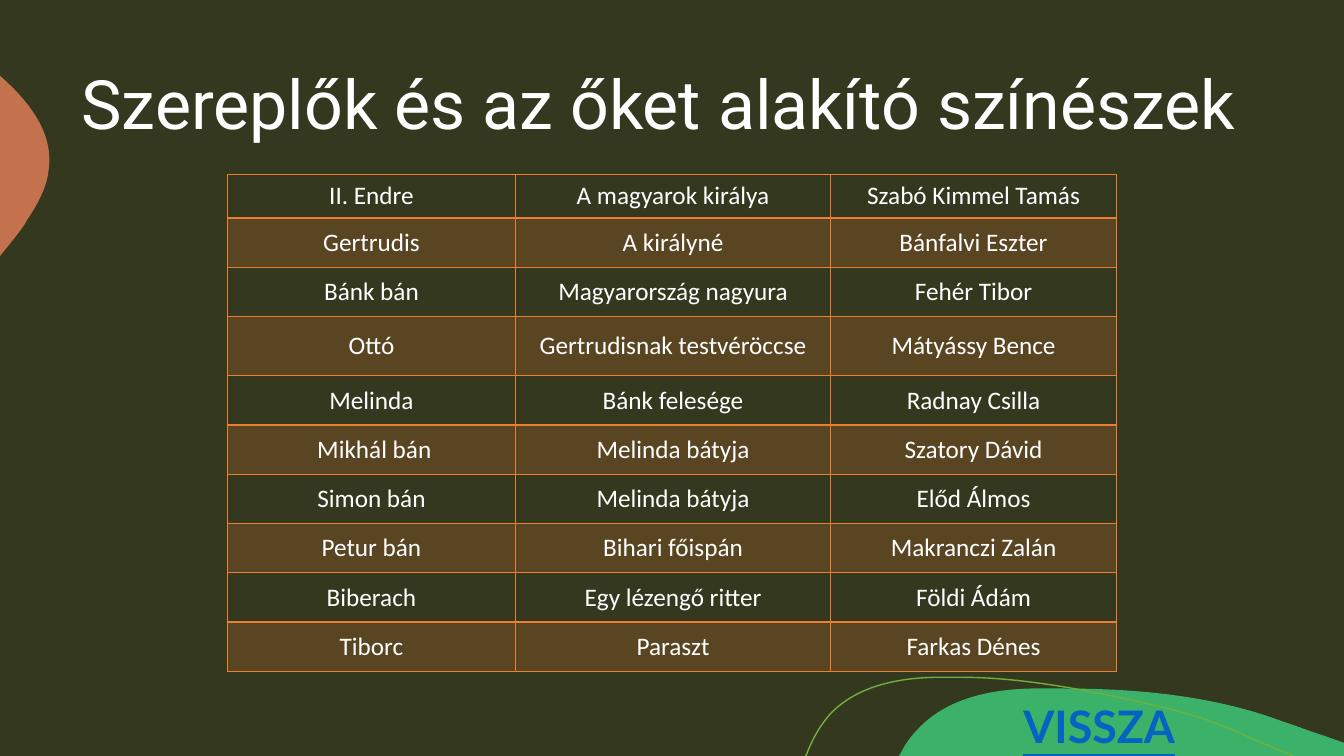
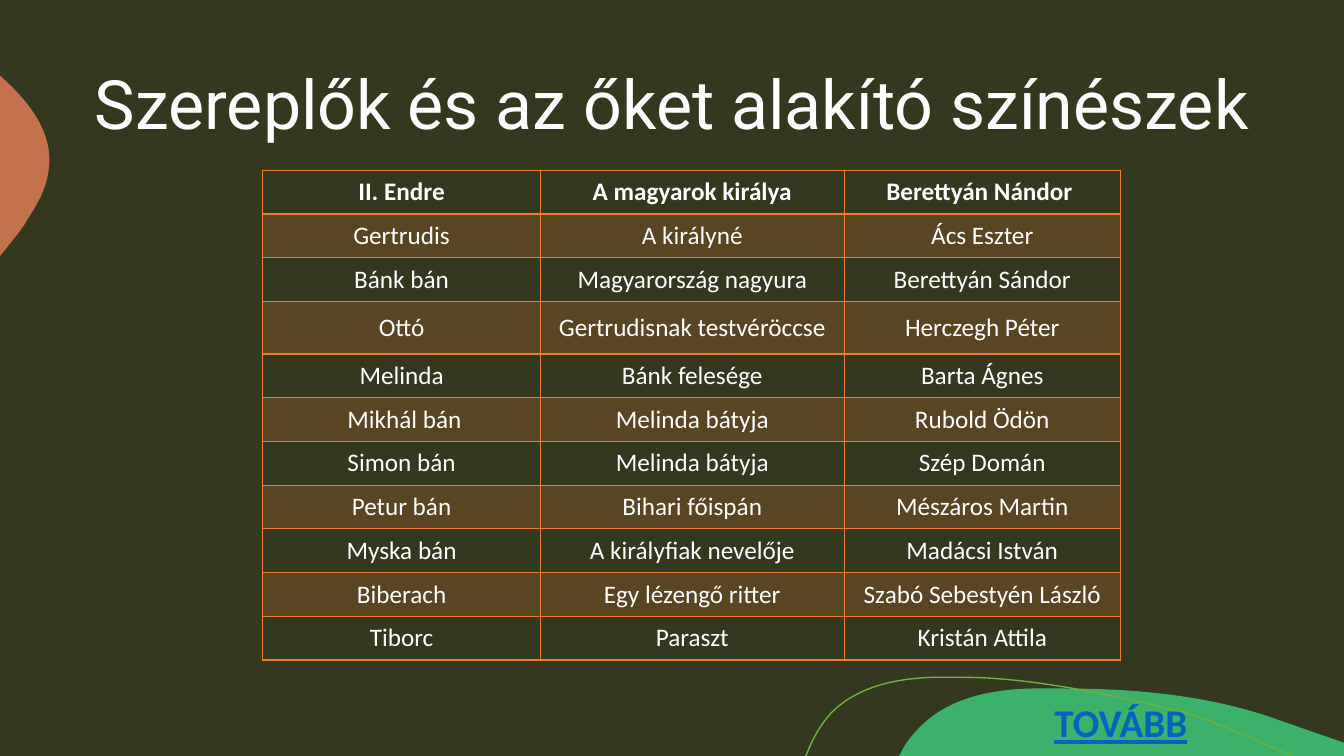
from lxml import etree
from pptx import Presentation
from pptx.dml.color import RGBColor
from pptx.enum.text import MSO_ANCHOR, PP_ALIGN
from pptx.oxml.ns import qn
from pptx.util import Pt

LEFT, CENTER = PP_ALIGN.LEFT, PP_ALIGN.CENTER
TOP, MIDDLE = MSO_ANCHOR.TOP, MSO_ANCHOR.MIDDLE

# Colours
OLIVE = RGBColor(0x34, 0x38, 0x1F)
GREEN = RGBColor(0x3B, 0xB1, 0x6A)
RUST = RGBColor(0xC3, 0x72, 0x4D)
LIME = RGBColor(0x6E, 0xB1, 0x3B)
AMBER = RGBColor(0xED, 0x7D, 0x31)
WHITE = RGBColor(0xFF, 0xFF, 0xFF)
BLUE = RGBColor(0x05, 0x63, 0xC1)

# Text formats
TITLE = {"name": "Roboto", "size": Pt(48.6)}
BODY = {"name": "Calibri", "size": Pt(18), "bold": False}
LINK = {"bold": True, "underline": True}
INSET = {"margin_left": Pt(6.5), "margin_right": Pt(6.5),
         "margin_top": Pt(3), "margin_bottom": Pt(3)}

# Outlines in points: a pair is a line's end, six numbers are a Bezier curve
HILL = [(758.9, 491.8), (812.2, 491.8, 866.9, 496.8, 916.6, 515.5),
        (925.9, 518.4, 934.6, 522, 943.9, 524.9), (960, 530.6), (960, 540),
        (642.2, 540), (646.6, 532.1),
        (649.4, 527.8, 652.3, 524.2, 655.9, 520.6),
        (676.1, 499, 707, 492.5, 736.6, 491.8),
        (743.8, 491.8, 751, 491.8, 758.9, 491.8)]
BLOB = [(0, 54), (0.7, 54.7), (21.6, 73.4, 38.9, 95.8, 34.6, 122.4),
        (33.1, 134.6, 26.6, 146.2, 19.4, 157),
        (17.3, 161.3, 12.2, 167.8, 5.8, 175.7), (0, 182.9)]
ARC = [(575.3, 540), (576, 539.3), (580.3, 527.8, 586.1, 517.7, 593.3, 509.8),
       (612, 490.3, 640.1, 484.6, 666.7, 483.8), (687.6, 483.8),
       (735.8, 483.8, 792, 496.1, 831.6, 505.4),
       (870.5, 514.8, 882.7, 523.4, 923.8, 540)]

# Role, description, actor in the first and in the second cast
CAST = [
    ("II. Endre", "A magyarok királya", "Szabó Kimmel Tamás", "Berettyán Nándor "),
    ("Gertrudis", "A királyné", "Bánfalvi Eszter", "Ács Eszter"),
    ("Bánk bán", "Magyarország nagyura", "Fehér Tibor", "Berettyán Sándor"),
    ("Ottó", "Gertrudisnak testvéröccse", "Mátyássy Bence", "Herczegh Péter"),
    ("Melinda", "Bánk felesége", "Radnay Csilla", "Barta Ágnes"),
    (" Mikhál bán", "Melinda bátyja", "Szatory Dávid", "Rubold Ödön"),
    ("Simon bán", "Melinda bátyja", "Előd Álmos", "Szép Domán"),
    ("Petur bán", "Bihari főispán", "Makranczi Zalán", "Mészáros Martin"),
    ("Myska bán", "A királyfiak nevelője", None, "Madácsi István"),
    ("Biberach", "Egy lézengő ritter", "Földi Ádám", "Szabó Sebestyén László"),
    ("Tiborc", "Paraszt", "Farkas Dénes", "Kristán Attila"),
]
TALL = 3  # row of Ottó


def apply(item, form):
    for key, value in form.items():
        setattr(item, key, value)


def style(para, text, font, color, align):
    para.alignment = align
    run = para.add_run()
    run.text = text
    apply(run.font, font)
    run.font.color.rgb = color


def label(slide, box, text, font, color, align, frame):
    shape = slide.shapes.add_textbox(*map(Pt, box))
    apply(shape.text_frame, {"word_wrap": True, **frame})
    para = shape.text_frame.paragraphs[0]
    style(para, text, font, color, align)
    return para


def bend(shape, steps):
    """Turn the straight segments of the curved steps into Bezier curves."""
    lines = list(shape._element.iter(qn("a:lnTo")))
    for line, step in zip(lines, steps[1:]):
        if len(step) == 2:
            continue
        line.tag = qn("a:cubicBezTo")
        for spot in (0, 2):
            dot = etree.Element(qn("a:pt"),
                                x=str(Pt(step[spot]) - shape.left),
                                y=str(Pt(step[spot + 1]) - shape.top))
            line.insert(spot // 2, dot)


def outline(slide, steps, fill=None, line=None):
    dots = [(Pt(step[-2]), Pt(step[-1])) for step in steps]
    pen = slide.shapes.build_freeform(*dots[0])
    pen.add_line_segments(dots[1:], close=fill is not None)
    shape = pen.convert_to_shape()
    bend(shape, steps)
    shape.shadow.inherit = False
    if fill is None:
        shape.fill.background()
        shape.line.color.rgb = line
        shape.line.width = Pt(1)
    else:
        shape.fill.solid()
        shape.fill.fore_color.rgb = fill
        shape.line.fill.background()


def border(cell, widths):
    props = cell._tc.get_or_add_tcPr()
    for spot, (side, width) in enumerate(widths.items()):
        line = etree.Element(qn("a:ln" + side), w=str(Pt(width)))
        solid = etree.SubElement(line, qn("a:solidFill"))
        etree.SubElement(solid, qn("a:srgbClr"), val=str(AMBER))
        props.insert(spot, line)


def tint(cell):
    cell.fill.solid()
    cell.fill.fore_color.rgb = AMBER
    color = cell._tc.tcPr.find(".//" + qn("a:srgbClr"))
    etree.SubElement(color, qn("a:alpha"), val="20000")


def grid(slide, spot, cols, heights, rows, bold):
    """Heights are those of the head, the plain rows and the tall row."""
    head, plain, tall = heights
    highs = [head] + [plain] * (len(rows) - 1)
    highs[TALL] = tall
    box = (*spot, sum(cols), sum(highs))
    table = slide.shapes.add_table(len(rows), len(cols), *map(Pt, box)).table
    apply(table, {"first_row": False, "horz_banding": False})
    for col, width in zip(table.columns, cols):
        col.width = Pt(width)
    for r, (row, high) in enumerate(zip(rows, highs)):
        table.rows[r].height = Pt(high)
        for c, text in enumerate(row):
            cell = table.cell(r, c)
            apply(cell, {"vertical_anchor": MIDDLE, **INSET})
            font = {**BODY, "bold": bold and r == 0}
            style(cell.text_frame.paragraphs[0], text, font, WHITE, CENTER)
            if r % 2:
                tint(cell)
            else:
                cell.fill.background()
            border(cell, {"L": 1, "R": 1, "T": 2 if r == 1 else 1,
                          "B": 2 if r == 0 else 1})


def base(deck, left, top, high):
    """Add a slide with the shared decoration and title."""
    slide = deck.slides.add_slide(deck.slide_layouts[6])
    outline(slide, HILL, fill=GREEN)
    outline(slide, BLOB, fill=RUST)
    outline(slide, ARC, line=LIME)
    para = label(slide, (left, top, 840, high),
                 "Szereplők és az őket alakító színészek", TITLE, WHITE, CENTER,
                 {"vertical_anchor": TOP, "margin_top": Pt(50.3 - top),
                  "margin_left": 0, "margin_right": 0})
    para.add_line_break()
    para.line_spacing = 0.9
    return slide


def main():
    deck = Presentation()
    deck.slide_width, deck.slide_height = Pt(960), Pt(540)
    back = deck.slide_master.background.fill
    back.solid()
    back.fore_color.rgb = OLIVE

    # First cast
    slide = base(deck, 50.4, -16.6, 180)
    rows = [(role, note, name) for role, note, name, _ in CAST if name]
    grid(slide, (162.4, 124.6), (205.9, 225, 204.3), (31.2, 35.2, 42.3), rows,
         False)
    label(slide, (723.9, 495.4, 143.3, 46), "VISSZA",
          {"name": "Lato", "size": Pt(32), **LINK}, BLUE, LEFT,
          {"vertical_anchor": TOP})

    # Second cast
    slide = base(deck, 59.9, 0, 162.7)
    rows = [(role, note, name) for role, note, _, name in CAST]
    grid(slide, (187.7, 121.6), (198.3, 217, 197.3), (31.25, 31.25, 37.5), rows,
         True)
    label(slide, (741.6, 495.4, 118, 41), "TOVÁBB",
          {"name": "Calibri", "size": Pt(28), **LINK}, BLUE, CENTER,
          {"vertical_anchor": MIDDLE})

    deck.save("out.pptx")


if __name__ == "__main__":
    main()
